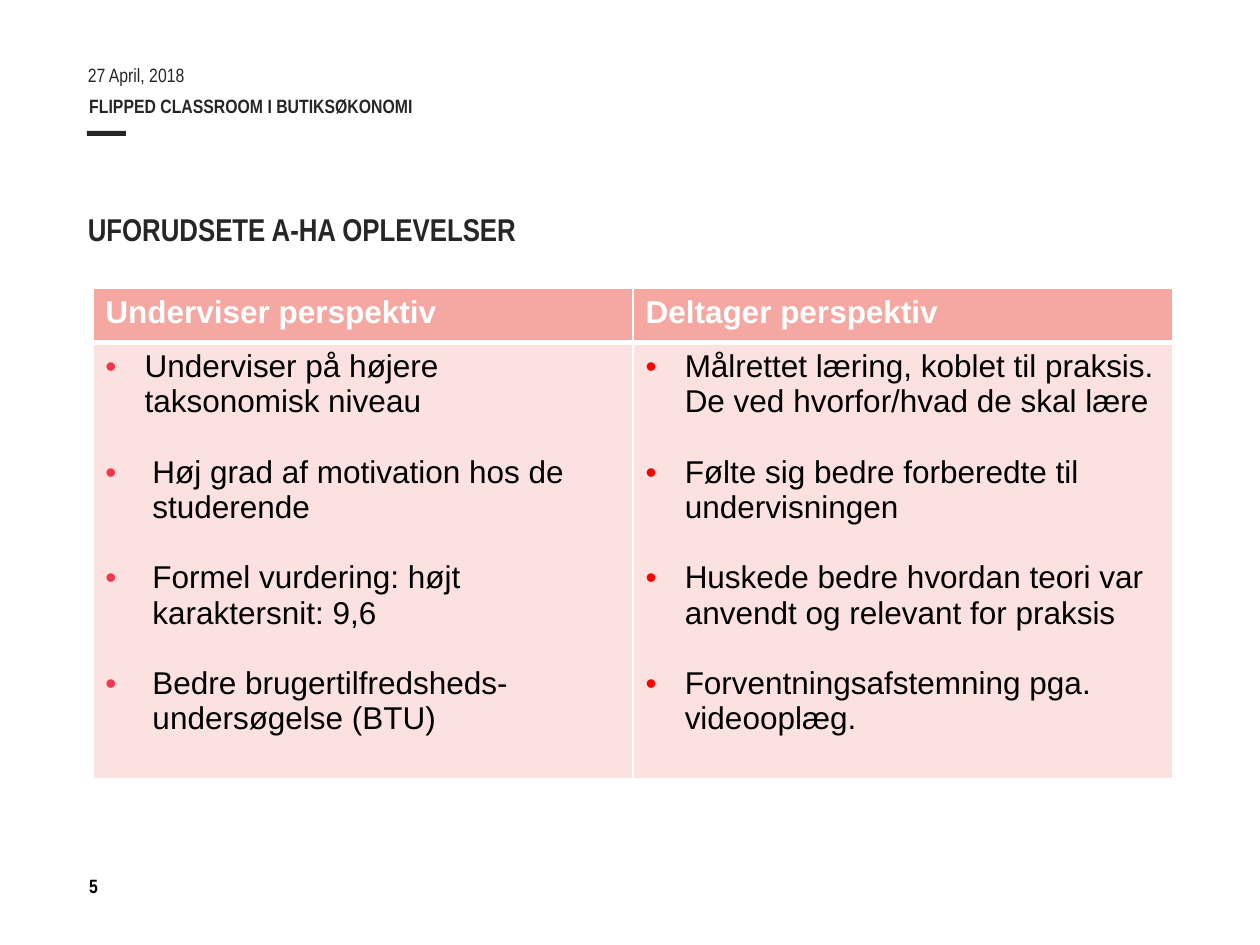
from pptx import Presentation
from pptx.dml.color import RGBColor
from pptx.enum.shapes import MSO_SHAPE
from pptx.enum.text import MSO_ANCHOR
from pptx.oxml import parse_xml
from pptx.oxml.ns import nsdecls
from pptx.util import Cm, Pt

# Content
LABELS = [  # text, (left, top, width, height) in cm, anchor, format
    ("27 April, 2018", (1.52, 0.99, 5.72, 1.02), MSO_ANCHOR.MIDDLE, "date"),
    ("FLIPPED CLASSROOM I BUTIKSØKONOMI", (1.55, 1.63, 17.25, 1.02),
     MSO_ANCHOR.MIDDLE, "topic"),
    ("5", (1.55, 17.5, 5.72, 1.02), MSO_ANCHOR.TOP, "page"),
    ("UFORUDSETE A-HA OPLEVELSER", (1.52, 3.61, 22.12, 1.52),
     MSO_ANCHOR.BOTTOM, "title"),
]
COLUMNS = [  # heading, bullet colour, indents in cm, points
    ("Underviser perspektiv", "F4364C", (0.79, 0.95, 0.95, 0.95), [
        "Underviser på højere taksonomisk niveau",
        "Høj grad af motivation hos de studerende",
        "Formel vurdering: højt karaktersnit: 9,6",
        "Bedre brugertilfredsheds-undersøgelse (BTU)"]),
    ("Deltager perspektiv", "FF0000", (0.79,) * 4, [
        "Målrettet læring, koblet til praksis. De ved hvorfor/hvad de skal lære",
        "Følte sig bedre forberedte til undervisningen",
        "Huskede bedre hvordan teori var anvendt og relevant for praksis",
        "Forventningsafstemning pga. videooplæg."]),
]

# Colours and type
THEME = {
    "ink": "262626", "header": "F5A8A1", "body": "FBE1E0", "grid": "FFFFFF",
    "date": {"name": "Arial Narrow", "size": Pt(11), "bold": False, "color": "262626"},
    "topic": {"name": "Arial Narrow", "size": Pt(11), "bold": True, "color": "262626"},
    "page": {"name": "Arial Narrow", "size": Pt(11), "bold": True, "color": "000000"},
    "title": {"name": "Arial Narrow", "size": Pt(18), "bold": True, "color": "262626"},
    "head": {"name": "Arial", "size": Pt(18), "bold": True, "color": "FFFFFF"},
    "point": {"name": "Arial", "size": Pt(18), "bold": False, "color": "000000"},
}
GAP = Pt(20)
ROWS = (1.09, 8.79)
WIDTH = 10.89


def write(para, text, style):
    run = para.add_run()
    run.text = text
    for key, value in THEME[style].items():
        if key == "color":
            run.font.color.rgb = RGBColor.from_string(value)
        else:
            setattr(run.font, key, value)


def paint(fill, color):
    fill.solid()
    fill.fore_color.rgb = RGBColor.from_string(color)


def dress(cell, color, top, bottom):
    """Fill a cell and draw its four borders, widths in points."""
    paint(cell.fill, color)
    props = cell._tc.get_or_add_tcPr()
    sides = {"lnL": 1, "lnR": 1, "lnT": top, "lnB": bottom}
    for spot, (side, width) in enumerate(sides.items()):
        props.insert(spot, parse_xml(
            f'<a:{side} {nsdecls("a")} w="{Pt(width)}"><a:solidFill>'
            f'<a:srgbClr val="{THEME["grid"]}"/></a:solidFill></a:{side}>'))


def bullet(para, color, indent):
    props = para._p.get_or_add_pPr()
    props.set("marL", str(Cm(indent)))
    props.set("indent", str(-Cm(indent)))
    for part in (f'<a:buClr {nsdecls("a")}><a:srgbClr val="{color}"/></a:buClr>',
                 f'<a:buFont {nsdecls("a")} typeface="Arial"/>',
                 f'<a:buChar {nsdecls("a")} char="•"/>'):
        props.append(parse_xml(part))


deck = Presentation()
deck.slide_width, deck.slide_height = Cm(25.4), Cm(19.05)
slide = deck.slides.add_slide(deck.slide_layouts[6])

# Accent bar
bar = slide.shapes.add_shape(MSO_SHAPE.RECTANGLE, Cm(1.75), Cm(2.64), Cm(0.79), Cm(0.1))
bar.shadow.inherit = False
paint(bar.fill, THEME["ink"])
bar.line.fill.background()

# Header, page number and title
for text, place, anchor, style in LABELS:
    frame = slide.shapes.add_textbox(*map(Cm, place)).text_frame
    frame.word_wrap = True
    frame.vertical_anchor = anchor
    write(frame.paragraphs[0], text, style)

# Table of the two views
table = slide.shapes.add_table(2, len(COLUMNS), Cm(1.87), Cm(5.82),
                               Cm(WIDTH * len(COLUMNS)), Cm(sum(ROWS))).table
for row, height in zip(table.rows, ROWS):
    row.height = Cm(height)
for col, (title, color, indents, points) in enumerate(COLUMNS):
    table.columns[col].width = Cm(WIDTH)
    head, body = table.cell(0, col), table.cell(1, col)
    dress(head, THEME["header"], 1, 3)
    dress(body, THEME["body"], 3, 1)
    write(head.text_frame.paragraphs[0], title, "head")
    frame = body.text_frame
    for spot, (point, indent) in enumerate(zip(points, indents)):
        para = frame.add_paragraph() if spot else frame.paragraphs[0]
        bullet(para, color, indent)
        if spot:
            para.space_before = GAP
        write(para, point, "point")

deck.save("out.pptx")
